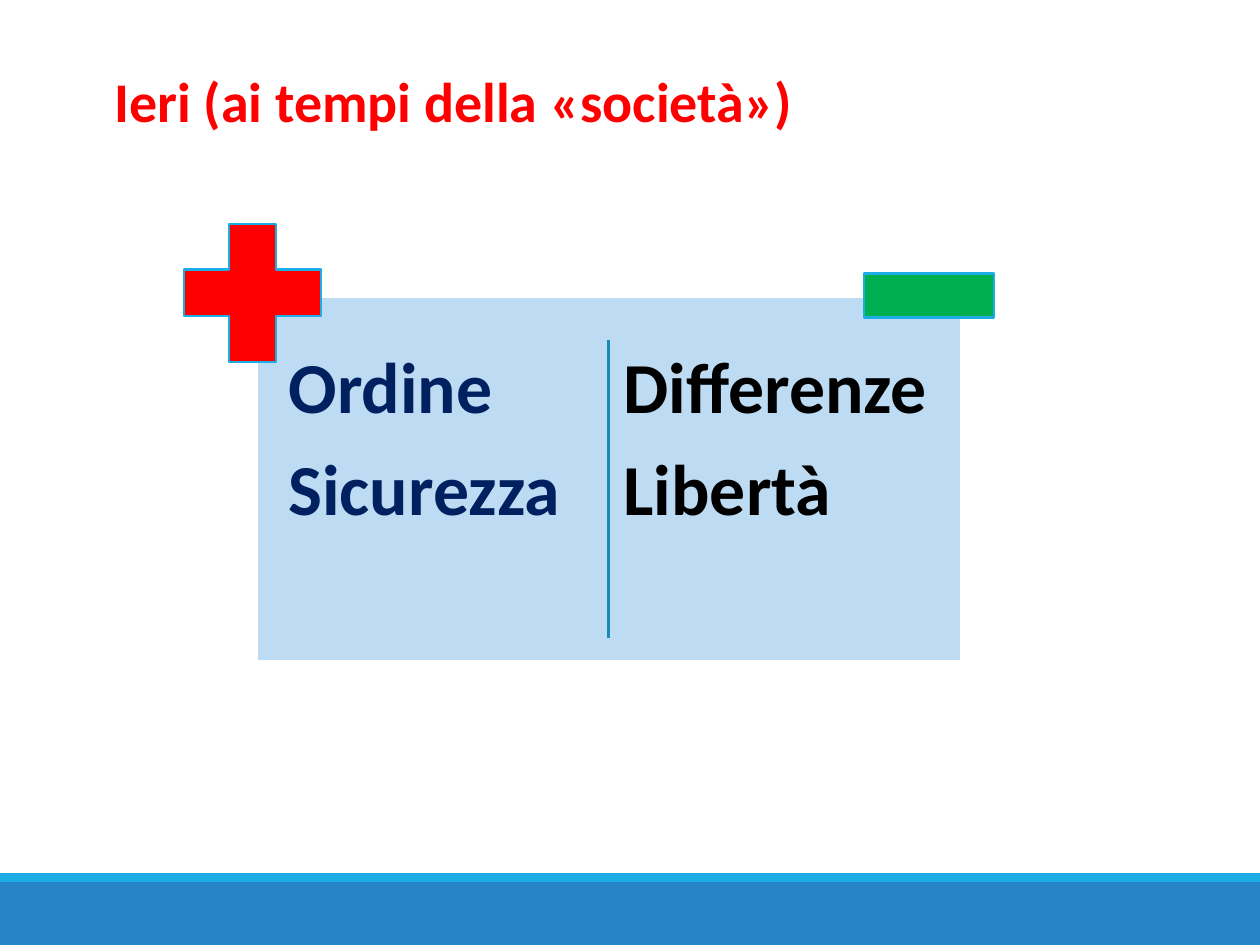
from dataclasses import dataclass

from pptx import Presentation
from pptx import util as u
from pptx.dml.color import RGBColor
from pptx.enum import shapes, text
from pptx.oxml.ns import qn
from lxml import etree

Inches = u.Inches


@dataclass(frozen=True)
class Theme:
    font: str = "Calibri"
    title_size: int = 32
    word_size: int = 41
    line_width: float = 1.25
    red: str = "FF0000"
    green: str = "00B050"
    navy: str = "002060"
    black: str = "000000"
    white: str = "FFFFFF"
    panel: str = "BDDBF2"
    cyan: str = "1CADE4"
    blue: str = "2683C6"
    divider: str = "168BB7"


THEME = Theme()


def rgb(value):
    return RGBColor.from_string(value)


def box(left, top, width, height):
    return [Inches(v) for v in (left, top, width, height)]


def style_line(line, color):
    line.color.rgb = rgb(color)
    line.width = u.Pt(THEME.line_width)


def style_font(paragraph, size, color):
    font = paragraph.font
    font.name, font.size, font.bold = THEME.font, u.Pt(size), True
    font.color.rgb = rgb(color)


def add_block(slide, kind, place, fill, outline=None):
    block = slide.shapes.add_shape(kind, *box(*place))
    block.shadow.inherit = False
    block.fill.solid()
    block.fill.fore_color.rgb = rgb(fill)
    if outline:
        style_line(block.line, outline)
    else:
        block.line.fill.background()
    return block


def add_divider(slide, x, top, bottom):
    divider = slide.shapes.add_connector(
        shapes.MSO_CONNECTOR.STRAIGHT, *box(x, top, x, bottom))
    style_line(divider.line, THEME.divider)
    etree.SubElement(divider._element.spPr, qn("a:effectLst"))


def add_column(slide, left, words, color):
    frame = slide.shapes.add_textbox(*box(left, 2.7, 2.6, 2.47)).text_frame
    frame.word_wrap = True
    frame.margin_left = frame.margin_right = Inches(0.09)
    frame.margin_top = frame.margin_bottom = Inches(0.09)
    frame.text = "\n".join(words)
    for paragraph in frame.paragraphs:
        paragraph.line_spacing = 0.9
        paragraph.space_after = u.Pt(round(0.35 * THEME.word_size))
        style_font(paragraph, THEME.word_size, color)


def set_title(slide, wording):
    title = slide.shapes.title
    title.left, title.top, title.width, title.height = box(0.81, 0.48, 7.08, 0.64)
    frame = title.text_frame
    frame.text = wording
    frame.word_wrap = True
    frame.auto_size = text.MSO_AUTO_SIZE.NONE
    frame.vertical_anchor = text.MSO_ANCHOR.TOP
    heading = frame.paragraphs[0]
    heading.alignment = text.PP_ALIGN.LEFT
    style_font(heading, THEME.title_size, THEME.red)


def main():
    prs = Presentation()
    prs.slide_width, prs.slide_height = Inches(10), Inches(7.5)
    slide = prs.slides.add_slide(prs.slide_layouts[5])
    rectangle = shapes.MSO_SHAPE.RECTANGLE

    # Footer bands
    add_block(slide, rectangle, (0, 7, 10, 0.5), THEME.blue)
    add_block(slide, rectangle, (0, 6.93, 10, 0.07), THEME.cyan)

    # Panel with gains and losses
    add_block(slide, rectangle, (2.04, 2.36, 5.59, 2.89), THEME.panel, THEME.white)
    add_column(slide, 2.2, ["Ordine", "Sicurezza"], THEME.navy)
    add_column(slide, 4.86, ["Differenze", "Libertà"], THEME.black)

    # Plus and minus signs
    plus = add_block(slide, shapes.MSO_SHAPE.CROSS, (1.46, 1.78, 1.09, 1.09),
                     THEME.red, THEME.cyan)
    plus.adjustments[0] = 0.33
    add_block(slide, rectangle, (6.86, 2.17, 1.03, 0.35), THEME.green, THEME.cyan)
    add_divider(slide, 4.83, 2.7, 5.06)

    set_title(slide, "Ieri (ai tempi della «società»)")
    prs.save("out.pptx")


if __name__ == "__main__":
    main()
